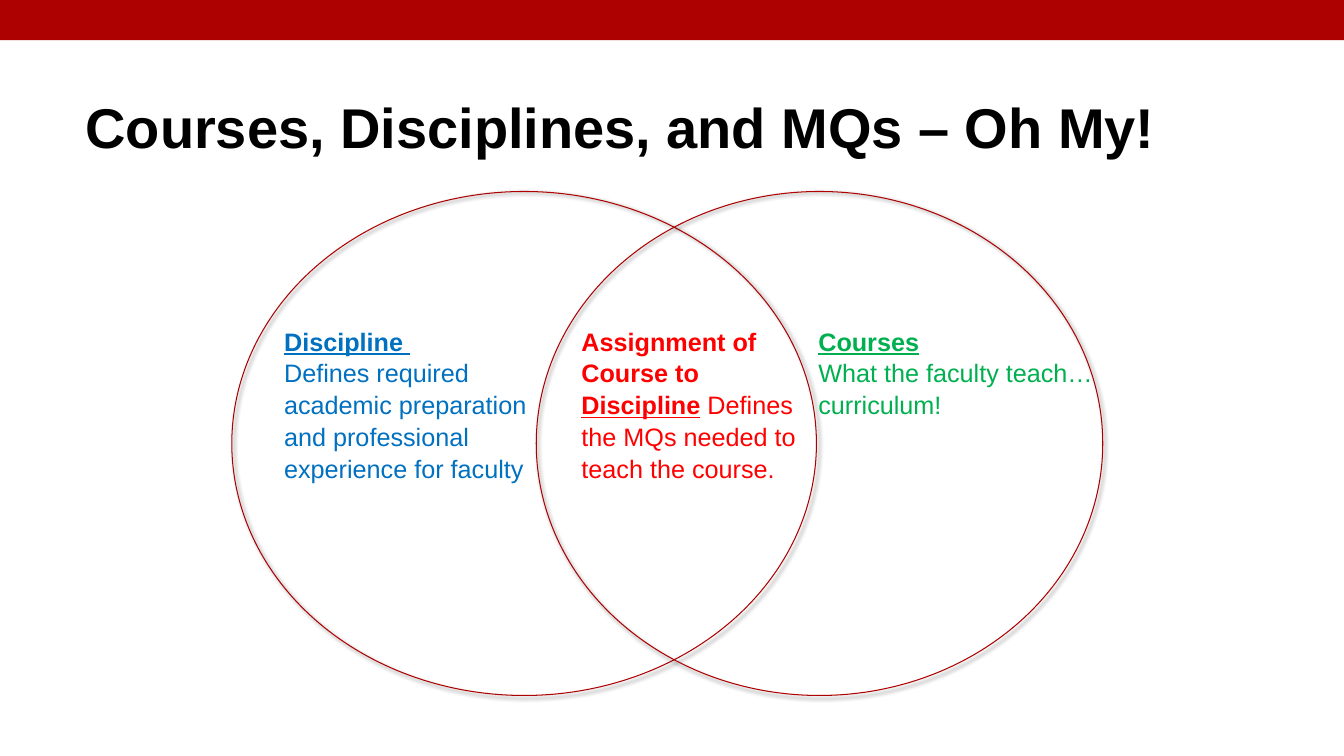
import pptx
import pptx.dml.color
import pptx.enum.shapes
import pptx.enum.text
import pptx.oxml
import pptx.oxml.ns
import pptx.util

Pt = pptx.util.Pt
RGBColor = pptx.dml.color.RGBColor
SHAPE = pptx.enum.shapes.MSO_SHAPE
ANCHOR = pptx.enum.text.MSO_ANCHOR

DARK_RED = RGBColor(0xAD, 0x01, 0x01)
BLUE = RGBColor(0x00, 0x70, 0xC0)
GREEN = RGBColor(0x00, 0xB0, 0x50)
RED = RGBColor(0xFF, 0x00, 0x00)
BLACK = RGBColor(0x00, 0x00, 0x00)

WIDTH, HEIGHT = 960, 540
CIRCLE_TOP, CIRCLE_HEIGHT = 136.8, 360
LABEL_TOP = 228.24

PLAIN = {}
BOLD = {"bold": True}
UNDERLINED = {"underline": True}
HEADING = {"bold": True, "underline": True}

SHADOW = (
    f'<a:effectLst {pptx.oxml.ns.nsdecls("a")}>'
    '<a:outerShdw blurRad="38100" dist="25400" dir="2700000" rotWithShape="0">'
    '<a:srgbClr val="000000"><a:alpha val="60000"/></a:srgbClr>'
    '</a:outerShdw></a:effectLst>'
)


class Slide:
    font = "Arial"

    def __init__(self, prs):
        self.s = prs.slides.add_slide(prs.slide_layouts[6])

    def shape(self, kind, *box):
        sp = self.s.shapes.add_shape(kind, *map(Pt, box))
        sp.shadow.inherit = False
        return sp

    def bar(self, *box):
        sp = self.shape(SHAPE.RECTANGLE, *box)
        sp.fill.solid()
        sp.fill.fore_color.rgb = DARK_RED
        sp.line.fill.background()

    def circle(self, left, width):
        """Draw one outlined, shadowed set of the Venn diagram."""
        sp = self.shape(SHAPE.OVAL, left, CIRCLE_TOP, width, CIRCLE_HEIGHT)
        sp.fill.background()
        sp.line.color.rgb = DARK_RED
        sp.line.width = Pt(0.75)
        effects = sp.element.spPr.find(pptx.oxml.ns.qn("a:effectLst"))
        effects.getparent().replace(effects, pptx.oxml.parse_xml(SHADOW))

    def text(self, box, paragraphs, color, size=18, anchor=ANCHOR.TOP, spacing=1.05):
        """Add a text box; each paragraph is a list of (text, format) runs."""
        tf = self.s.shapes.add_textbox(*map(Pt, box)).text_frame
        tf.word_wrap = True
        tf.vertical_anchor = anchor
        for i, runs in enumerate(paragraphs):
            p = tf.add_paragraph() if i else tf.paragraphs[0]
            p.line_spacing = spacing
            for words, extra in runs:
                r = p.add_run()
                r.text = words
                r.font.color.rgb = color
                for name, value in {"name": self.font, "size": Pt(size), **extra}.items():
                    setattr(r.font, name, value)


def main():
    prs = pptx.Presentation()
    prs.slide_width, prs.slide_height = Pt(WIDTH), Pt(HEIGHT)
    slide = Slide(prs)

    slide.bar(0, 0, WIDTH, 28.8)
    slide.circle(165.6, 417.6)
    slide.circle(383.04, 404.64)

    slide.text((195.84, LABEL_TOP, 212.4, 194.4), [
        [("Discipline", HEADING), (" ", UNDERLINED)],
        [("Defines required academic preparation and professional "
          "experience for faculty", PLAIN)],
    ], BLUE)
    slide.text((577.44, LABEL_TOP, 229.68, 88.56), [
        [("Courses", HEADING)],
        [("What the faculty teach…curriculum!", PLAIN)],
    ], GREEN)
    slide.text((408.24, LABEL_TOP, 169.2, 221.04), [
        [("Assignment of Course to ", BOLD), ("Discipline", HEADING),
         (" Defines the MQs needed to teach the course.", PLAIN)],
    ], RED)
    slide.text((54, 61.92, 840.96, 55.44),
               [[("Courses, Disciplines, and MQs – Oh My!", BOLD)]],
               BLACK, size=40, anchor=ANCHOR.BOTTOM, spacing=1.0)

    prs.save("out.pptx")


if __name__ == "__main__":
    main()
